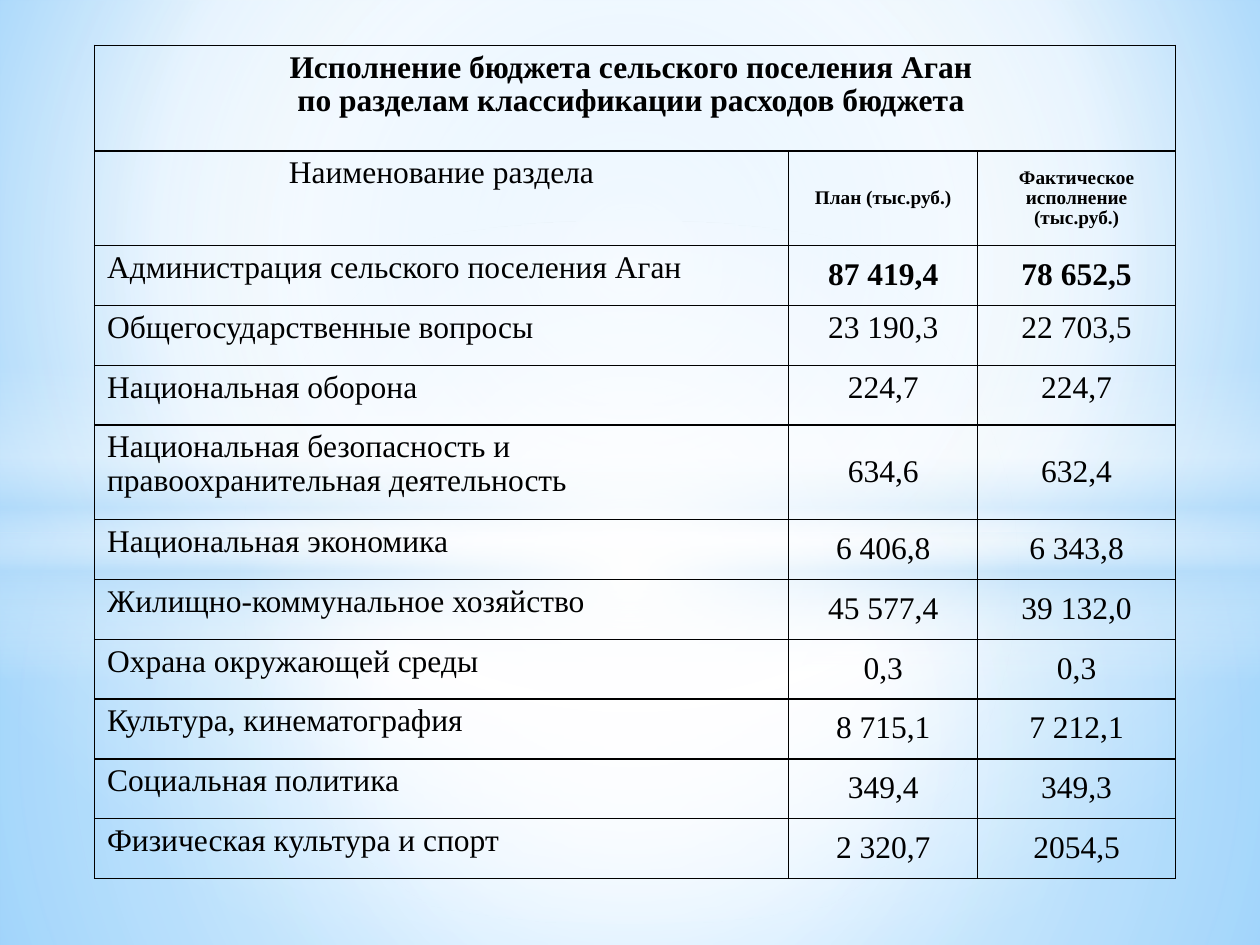
"""Builds a slide with a table of budget execution by expenditure section."""
from lxml import etree
from pptx import Presentation
from pptx.dml.color import RGBColor
from pptx.enum import shapes, text
from pptx.oxml import ns
from pptx.util import Inches, Pt

COLORS = {"ink": "000000", "white": "FFFFFF", "mist": "B4DCFA", "sky": "9ED5FF", "blue": "5BB9FF"}


def add_node(parent, tag, **attributes):
    node = etree.SubElement(parent, ns.qn(tag))
    for key, value in attributes.items():
        node.set(key, str(value))
    return node


def paint_gradient(owner, fill, stops, focus=None):
    fill.gradient()
    gradient = owner.element.find(".//" + ns.qn("a:gradFill"))
    for child in list(gradient):
        gradient.remove(child)
    stop_list = add_node(gradient, "a:gsLst")
    for position, color, opacity in stops:
        stop = add_node(stop_list, "a:gs", pos=position * 1000)
        tint = add_node(stop, "a:srgbClr", val=COLORS[color])
        add_node(tint, "a:alpha", val=opacity * 1000)
    if focus:
        route = add_node(gradient, "a:path", path="circle")
        add_node(route, "a:fillToRect", **{side: share * 1000 for side, share in zip("ltrb", focus)})
    else:
        add_node(gradient, "a:lin", ang=90 * 60000, scaled=0)


deck = Presentation()
deck.slide_width, deck.slide_height = Inches(10), Inches(7.5)
page = deck.slides.add_slide(deck.slide_layouts[6])
paint_gradient(page, page.background.fill,
               [(0, "sky", 100), (60, "white", 100), (100, "blue", 100)], (20, 10, 20, 60))

RECTANGLE, OVAL = shapes.MSO_SHAPE.RECTANGLE, shapes.MSO_SHAPE.OVAL
CENTER = (50, 50, 50, 50)
glows = [
    (RECTANGLE, 4.23, 3.27, CENTER, [(0, "white", 91), (37, "white", 76), (100, "mist", 79)]),
    (RECTANGLE, 0, 4.23, CENTER, [(0, "white", 89), (48, "white", 62), (100, "mist", 79)]),
    (RECTANGLE, 2.9, 2.5, None, [(0, "white", 0), (29, "white", 30), (45, "mist", 40),
                                 (55, "white", 26), (65, "mist", 60), (100, "white", 0)]),
    (OVAL, 1.75, 5.58, CENTER, [(0, "white", 100), (54, "white", 0)]),
]
for kind, top, height, focus, stops in glows:
    glow = page.shapes.add_shape(kind, 0, Inches(top), deck.slide_width, Inches(height))
    glow.shadow.inherit = False
    glow.line.fill.background()
    paint_gradient(glow, glow.fill, stops, focus)

TITLE = "Исполнение бюджета сельского поселения Аган \nпо разделам классификации расходов бюджета "
rows = [
    (TITLE, "", ""),
    ("Наименование раздела", "План (тыс.руб.)", "Фактическое исполнение (тыс.руб.)"),
    ("Администрация сельского поселения Аган", "87 419,4", "78 652,5"),
    ("Общегосударственные вопросы", "23 190,3", "22 703,5"),
    ("Национальная оборона", "224,7", "224,7"),
    ("Национальная безопасность и правоохранительная деятельность", "634,6", "632,4"),
    ("Национальная экономика", "6 406,8", "6 343,8"),
    ("Жилищно-коммунальное хозяйство", "45 577,4", "39 132,0"),
    ("Охрана окружающей среды", "0,3", "0,3"),
    ("Культура, кинематография", "8 715,1", "7 212,1"),
    ("Социальная политика", "349,4", "349,3"),
    ("Физическая культура и спорт", "2 320,7", "2054,5"),
]
TITLE_ROW, HEADER_ROW, TOTAL_ROW = 0, 1, 2
TOP_ANCHORED_ROWS = (3, 4)
widths = [5.51, 1.5, 1.57]
tall_rows = {TITLE_ROW: 0.84, HEADER_ROW: 0.75, 5: 0.75}
heights = [tall_rows.get(index, 0.475) for index in range(len(rows))]

frame = page.shapes.add_table(len(rows), len(widths), Inches(0.75), Inches(0.36),
                              Inches(sum(widths)), Inches(sum(heights)))
table = frame.table
table.first_row = table.horz_banding = False
for column, width in zip(table.columns, widths):
    column.width = Inches(width)
for row, height in zip(table.rows, heights):
    row.height = Inches(height)
table.cell(0, 0).merge(table.cell(0, len(widths) - 1))

for row_index, row in enumerate(rows):
    for column_index, content in enumerate(row):
        cell = table.cell(row_index, column_index)
        cell.fill.background()
        properties = cell._tc.get_or_add_tcPr()
        for place, side in enumerate(("a:lnL", "a:lnR", "a:lnT", "a:lnB")):
            border = add_node(properties, side, w=Pt(1))
            add_node(add_node(border, "a:solidFill"), "a:srgbClr", val=COLORS["ink"])
            properties.insert(place, border)
        if cell.is_spanned:
            continue
        is_figure = column_index > 0
        if is_figure and row_index not in TOP_ANCHORED_ROWS:
            cell.vertical_anchor = text.MSO_ANCHOR.MIDDLE
        for line_index, line in enumerate(content.split("\n")):
            box = cell.text_frame
            para = box.add_paragraph() if line_index else box.paragraphs[0]
            para.line_spacing = 0.95
            centered = is_figure or row_index <= HEADER_ROW
            para.alignment = text.PP_ALIGN.CENTER if centered else text.PP_ALIGN.LEFT
            span = para.add_run()
            span.text = line
            span.font.name = "Times New Roman"
            span.font.size = Pt(11 if is_figure and row_index == HEADER_ROW else 18)
            span.font.bold = row_index == TITLE_ROW or (is_figure and row_index <= TOTAL_ROW)
            span.font.color.rgb = RGBColor.from_string(COLORS["ink"])

deck.save("out.pptx")
